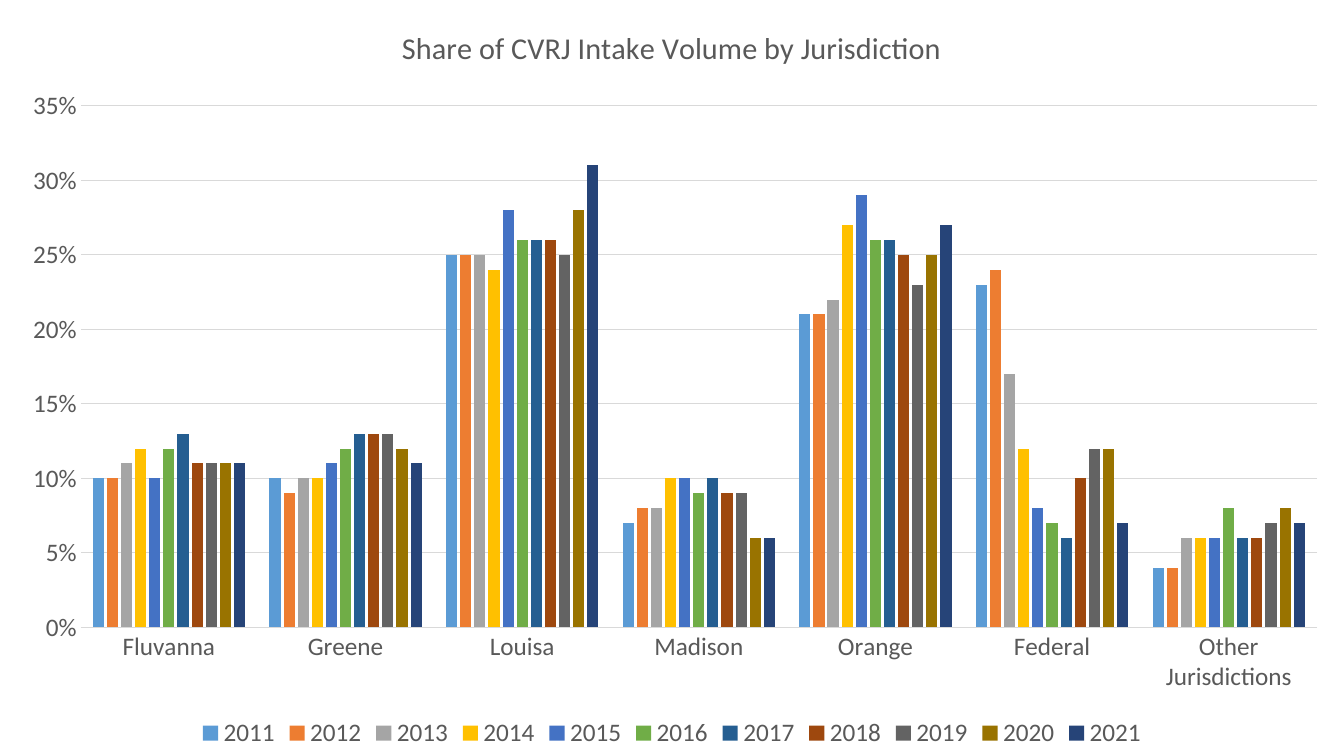
"""Build a slide with one clustered column chart of intake share by jurisdiction."""
from lxml import etree
from pptx import Presentation
from pptx.chart.data import CategoryChartData
from pptx.dml.color import RGBColor
from pptx.enum.chart import XL_CHART_TYPE, XL_LEGEND_POSITION, XL_TICK_MARK
from pptx.oxml.ns import qn
from pptx.util import Inches, Pt

COLUMN = XL_CHART_TYPE.COLUMN_CLUSTERED
BOTTOM = XL_LEGEND_POSITION.BOTTOM
NO_TICK = XL_TICK_MARK.NONE
GREY = RGBColor(0x59, 0x59, 0x59)
PALE = RGBColor(0xD9, 0xD9, 0xD9)
FACE = "Calibri"

COUNTIES = ["Fluvanna", "Greene", "Louisa", "Madison", "Orange", "Federal",
            "Other Jurisdictions"]
YEARS = [
    ("2011", RGBColor(0x5B, 0x9B, 0xD5), [10, 10, 25, 7, 21, 23, 4]),
    ("2012", RGBColor(0xED, 0x7D, 0x31), [10, 9, 25, 8, 21, 24, 4]),
    ("2013", RGBColor(0xA5, 0xA5, 0xA5), [11, 10, 25, 8, 22, 17, 6]),
    ("2014", RGBColor(0xFF, 0xC0, 0x00), [12, 10, 24, 10, 27, 12, 6]),
    ("2015", RGBColor(0x44, 0x72, 0xC4), [10, 11, 28, 10, 29, 8, 6]),
    ("2016", RGBColor(0x70, 0xAD, 0x47), [12, 12, 26, 9, 26, 7, 8]),
    ("2017", RGBColor(0x25, 0x5E, 0x91), [13, 13, 26, 10, 26, 6, 6]),
    ("2018", RGBColor(0x9E, 0x48, 0x0E), [11, 13, 26, 9, 25, 10, 6]),
    ("2019", RGBColor(0x63, 0x63, 0x63), [11, 13, 25, 9, 23, 12, 7]),
    ("2020", RGBColor(0x99, 0x73, 0x00), [11, 12, 28, 6, 25, 12, 8]),
    ("2021", RGBColor(0x26, 0x44, 0x78), [11, 11, 31, 6, 27, 7, 7]),
]


def style(font, size=18):
    font.name, font.size, font.bold = FACE, Pt(size), False
    font.color.rgb = GREY


def place(part, spot, **shares):
    for old in part.findall(qn("c:layout")):
        part.remove(old)
    layout = etree.Element(qn("c:layout"))
    manual = etree.SubElement(layout, qn("c:manualLayout"))
    if part.tag == qn("c:plotArea"):
        etree.SubElement(manual, qn("c:layoutTarget")).set("val", "inner")
    for tag in ("xMode", "yMode"):
        etree.SubElement(manual, qn("c:" + tag)).set("val", "edge")
    for tag, share in shares.items():
        etree.SubElement(manual, qn("c:" + tag)).set("val", str(share))
    part.insert(spot, layout)


deck = Presentation()
deck.slide_width, deck.slide_height = Inches(13.33), Inches(7.5)
slide = deck.slides.add_slide(deck.slide_layouts[6])

data = CategoryChartData(number_format="0%")
data.categories = COUNTIES
for year, color, shares in YEARS:
    data.add_series(year, [share / 100 for share in shares])
chart = slide.shapes.add_chart(
    COLUMN, 0, 0, deck.slide_width, deck.slide_height, data).chart
style(chart.font)

chart.has_title = True
title = chart.chart_title
title.include_in_layout = False
title.text_frame.text = "Share of CVRJ Intake Volume by Jurisdiction"
style(title.text_frame.paragraphs[0].runs[0].font, 21.6)

plot = chart.plots[0]
plot.gap_width, plot.overlap, plot.vary_by_categories = 219, -27, False
for bars, (year, color, shares) in zip(plot.series, YEARS):
    bars.format.fill.solid()
    bars.format.fill.fore_color.rgb = color

names, scale = chart.category_axis, chart.value_axis
for axis in (names, scale):
    axis.major_tick_mark = axis.minor_tick_mark = NO_TICK
    style(axis.tick_labels.font)
scale.minimum_scale, scale.maximum_scale, scale.major_unit = 0, 0.35, 0.05
scale.tick_labels.number_format = "0%"
scale.tick_labels.number_format_is_linked = False
scale.format.line.fill.background()
for line in (names.format.line, scale.major_gridlines.format.line):
    line.color.rgb, line.width = PALE, Pt(0.75)

chart.has_legend = True
legend = chart.legend
legend.position, legend.include_in_layout = BOTTOM, False
style(legend.font)

area = chart.element.find(".//" + qn("c:plotArea"))
key = chart.element.find(".//" + qn("c:legend"))
place(area, 0, x=0.06, y=0.14, w=0.92, h=0.69)
place(key, 1, x=0.14, y=0.95, w=0.72, h=0.05)

deck.save("out.pptx")
